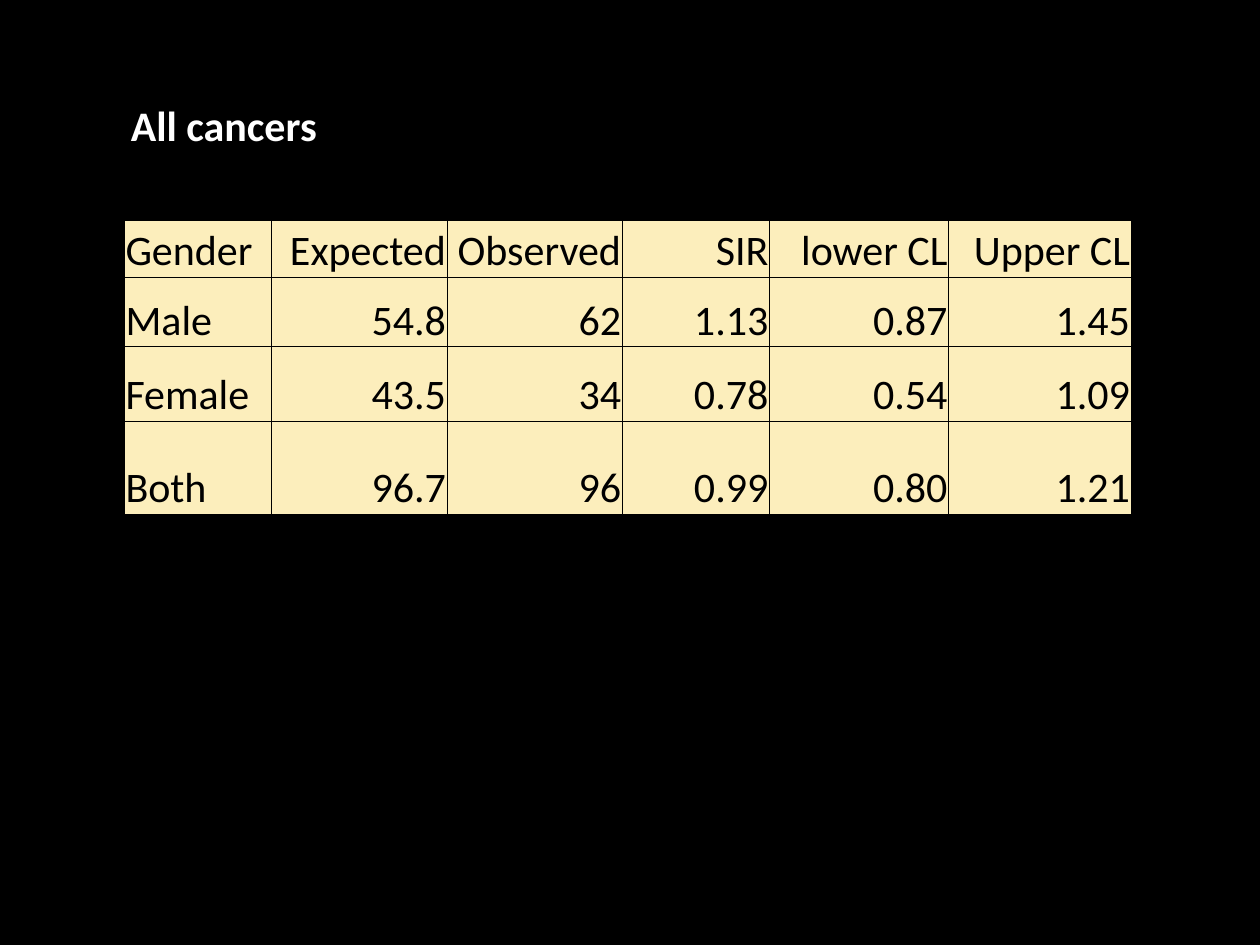
from dataclasses import dataclass

import pptx
import pptx.dml.color
import pptx.enum.text
import pptx.oxml
import pptx.oxml.ns
import pptx.util

Cm = pptx.util.Cm
Pt = pptx.util.Pt
RGBColor = pptx.dml.color.RGBColor
PP_ALIGN = pptx.enum.text.PP_ALIGN

BLACK = RGBColor(0x00, 0x00, 0x00)
WHITE = RGBColor(0xFF, 0xFF, 0xFF)
CREAM = RGBColor(0xFC, 0xEE, 0xBC)


@dataclass
class Column:
    header: str
    width: float
    values: list[str]
    align: PP_ALIGN = PP_ALIGN.RIGHT


COLUMNS = [
    Column("Gender", 2.97, ["Male", "Female", "Both"], PP_ALIGN.LEFT),
    Column("Expected", 3.53, ["54.8", "43.5", "96.7"]),
    Column("Observed", 3.53, ["62", "34", "96"]),
    Column("SIR", 2.97, ["1.13", "0.78", "0.99"]),
    Column("lower CL", 3.61, ["0.87", "0.54", "0.80"]),
    Column("Upper CL", 3.68, ["1.45", "1.09", "1.21"]),
]
ROW_HEIGHTS = [1.14, 1.4, 1.5, 1.88]


def set_text(p, text: str, color: RGBColor, bold: bool = False) -> None:
    p.text = text
    p.font.name = "Calibri"
    p.font.size = Pt(24)
    p.font.bold = bold
    p.font.color.rgb = color


def add_borders(cell, color: RGBColor, width: pptx.util.Length) -> None:
    tc_pr = cell._tc.get_or_add_tcPr()
    for side in ("lnL", "lnR", "lnT", "lnB"):
        tc_pr.append(pptx.oxml.parse_xml(
            f'<a:{side} {pptx.oxml.ns.nsdecls("a")} w="{width}"><a:solidFill>'
            f'<a:srgbClr val="{color}"/></a:solidFill></a:{side}>'
        ))


def fill_cell(cell, text: str, align: PP_ALIGN) -> None:
    add_borders(cell, BLACK, Pt(0.5))
    cell.fill.solid()
    cell.fill.fore_color.rgb = CREAM
    cell.margin_left = cell.margin_right = cell.margin_top = Cm(0.02)
    cell.margin_bottom = 0
    cell.vertical_anchor = pptx.enum.text.MSO_ANCHOR.BOTTOM
    p = cell.text_frame.paragraphs[0]
    set_text(p, text, BLACK)
    p.alignment = align


def add_results_table(s, left: float, top: float) -> None:
    width = sum(column.width for column in COLUMNS)
    table = s.shapes.add_table(
        len(ROW_HEIGHTS), len(COLUMNS),
        Cm(left), Cm(top), Cm(width), Cm(sum(ROW_HEIGHTS)),
    ).table
    for row, height in zip(table.rows, ROW_HEIGHTS):
        row.height = Cm(height)
    for c, column in enumerate(COLUMNS):
        table.columns[c].width = Cm(column.width)
        for r, text in enumerate([column.header, *column.values]):
            fill_cell(table.cell(r, c), text, column.align)


def add_heading(s, text: str) -> None:
    sp = s.shapes.add_textbox(Cm(2.39), Cm(1.88), Cm(5.97), Cm(1.27))
    tf = sp.text_frame
    tf.word_wrap = True
    tf.auto_size = pptx.enum.text.MSO_AUTO_SIZE.SHAPE_TO_FIT_TEXT
    set_text(tf.paragraphs[0], text, WHITE, bold=True)


def main() -> None:
    prs = pptx.Presentation()
    prs.slide_width = Cm(25.4)
    prs.slide_height = Cm(19.05)
    s = prs.slides.add_slide(prs.slide_layouts[6])
    s.background.fill.solid()
    s.background.fill.fore_color.rgb = BLACK
    add_results_table(s, 2.51, 4.45)
    add_heading(s, "All cancers")
    prs.save("out.pptx")


if __name__ == "__main__":
    main()
